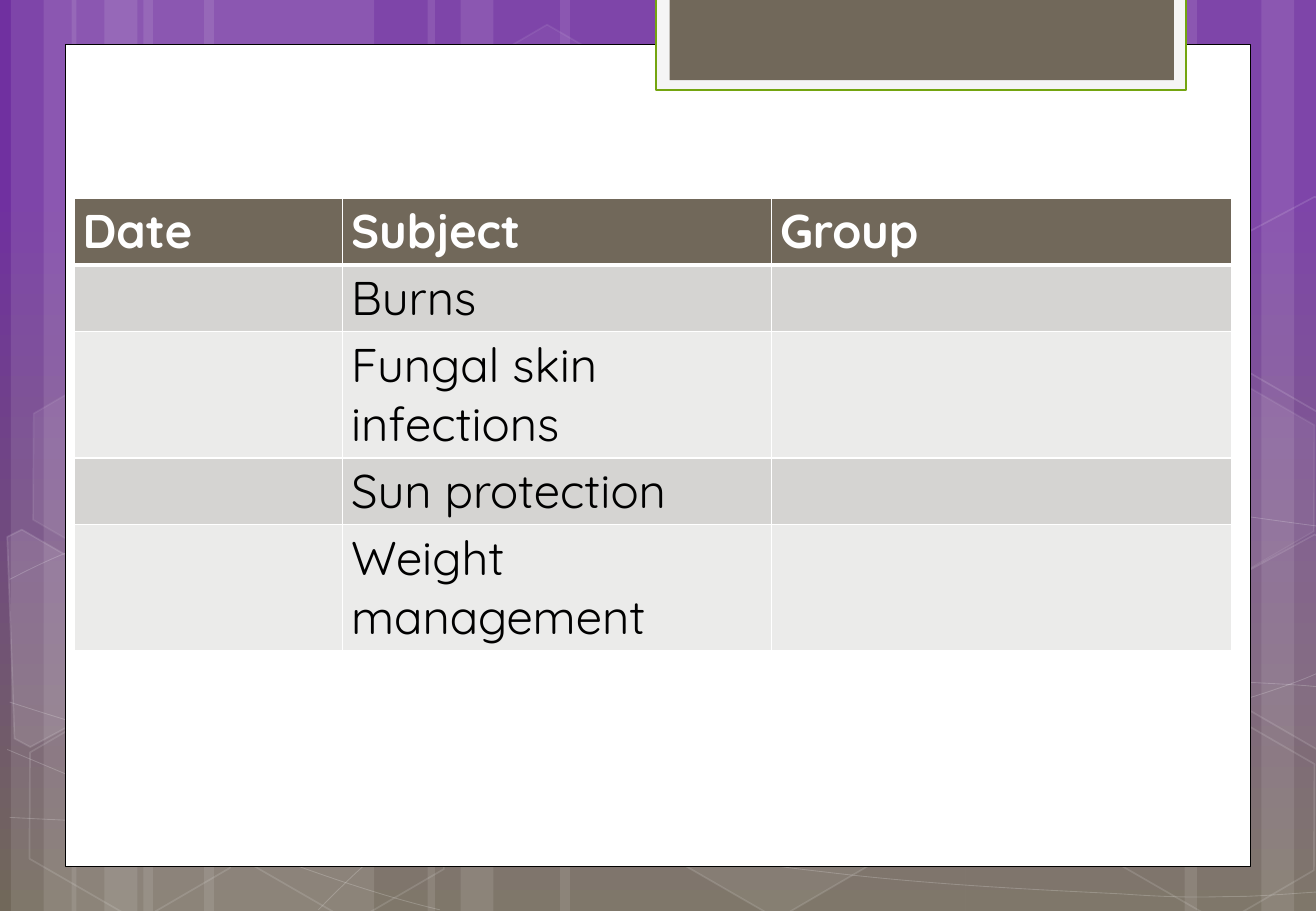
import pptx
import pptx.dml.color
import pptx.enum.shapes
import pptx.oxml
import pptx.oxml.ns
import pptx.util

Inches = pptx.util.Inches
Pt = pptx.util.Pt
MSO_SHAPE = pptx.enum.shapes.MSO_SHAPE
qn = pptx.oxml.ns.qn

COLORS = {
    "purple": "7030A0", "brown": "71685A", "white": "FFFFFF", "black": "000000",
    "tab": "F5F5F5", "green": "74A510", "band_dark": "D5D4D2", "band_light": "EBEBEA",
}
FONT = "Quicksand"
SLIDE_BOX = (0, 0, 10.83, 7.5)
PANEL_BOX = (0.54, 0.37, 9.75, 6.76)
TAB_BOX = (5.4, -0.02, 4.36, 0.76)
TABLE_BOX = (0.61, 1.63, 9.53, 3.73)

STRIPES = [
    (1.18, 1.9), (0.09, 0.54), (0.36, 0.9), (1.68, 1.9), (0.59, 0.54), (0.86, 0.9),
    (7.95, 1.9), (10.38, 0.54), (9.75, 0.9), (4.61, 3.34), (3.52, 0.54), (3.79, 0.9),
]
CURVES = [
    [(0.08, 6.73), (0.66, 6.76), (1.25, 6.79), (2.06, 6.78), (2.88, 6.77), (3.87, 6.75),
     (4.96, 6.65), (6.05, 6.55), (7.58, 6.36), (8.58, 6.17), (9.57, 5.98), (10.58, 5.68),
     (10.91, 5.51)],
    [(0.08, 4.77), (0.39, 4.61), (0.7, 4.46), (1.32, 4.31), (1.93, 4.16), (2.8, 3.94),
     (3.76, 3.87), (4.73, 3.8), (5.89, 3.79), (7.08, 3.87), (8.28, 3.95), (10.26, 4.26),
     (10.91, 4.34)],
    [(0.06, 6.17), (1.37, 6.72), (2.68, 7.27), (3.62, 7.49)],
    [(0.08, 5.78), (0.42, 5.89), (0.76, 6), (1.39, 6.16), (2.02, 6.31), (2.96, 6.56),
     (3.86, 6.73), (4.77, 6.9), (5.91, 7.08), (6.8, 7.18), (7.7, 7.29), (8.66, 7.33),
     (9.24, 7.36), (9.81, 7.4), (9.96, 7.38), (10.24, 7.38), (10.51, 7.37), (10.71, 7.35),
     (10.91, 7.34)],
    [(2.62, 7.49), (2.82, 7.29), (3.01, 7.09), (3.27, 6.91), (3.53, 6.73), (3.9, 6.53),
     (4.2, 6.39), (4.5, 6.25), (4.69, 6.19), (5.09, 6.09), (5.49, 5.99), (6.21, 5.85),
     (6.59, 5.78), (6.97, 5.71), (7.03, 5.71), (7.37, 5.69), (7.7, 5.66), (8.23, 5.63),
     (8.6, 5.62), (8.98, 5.61), (9.6, 5.62), (9.6, 5.62), (9.84, 5.62), (10.08, 5.62),
     (10.32, 5.62), (10.52, 5.63), (10.7, 5.64), (10.8, 5.65), (10.89, 5.66), (10.86, 5.65),
     (10.9, 5.66)],
]
HEXAGONS = [
    (3.62, 0.36, 4, 8), (5.38, 5.89, 6, 12), (0.12, 5.91, None, 12),
    (0.15, 3.12, 7, 8), (1.88, 5.92, None, 12), (8.16, 4.53, 10, 12),
    (9.04, 5.93, None, 12), (9.04, 3.14, 7, 8),
]
CUT_HEXAGONS = [
    ([(0.06, 4.42), (0.18, 4.36), (1.01, 4.84), (1.03, 5.73), (0.25, 6.15), (0.12, 6.08)], 10),
    ([(10.03, 4.83), (10.82, 4.4), (10.9, 4.45), (10.96, 6.16), (10.89, 6.2), (10.06, 5.72)], 4),
    ([(10.03, 2.04), (10.82, 1.62), (10.91, 1.67), (10.96, 3.38), (10.89, 3.42), (10.06, 2.94)],
     None),
]
COLUMN_WIDTHS = [2.21, 3.53, 3.79]
ROW_HEIGHTS = [0.55, 0.55, 1.04, 0.55, 1.04]
ROWS = [
    ["Date", "Subject", "Group"],
    ["", "Burns", ""],
    ["", "Fungal skin infections", ""],
    ["", "Sun protection", ""],
    ["", "Weight management", ""],
]


def rgb(name):
    return pptx.dml.color.RGBColor.from_string(COLORS[name])


def paint_fill(fill, color, opacity):
    if opacity is None:
        fill.background()
        return
    fill.solid()
    fill.fore_color.rgb = rgb(color)
    if opacity < 100:
        color_element = fill._xPr.find(".//" + qn("a:srgbClr"))
        alpha = color_element.makeelement(qn("a:alpha"), {"val": str(opacity * 1000)})
        color_element.append(alpha)


def style(shape, fill="white", opacity=100, line="white", line_width=1, line_opacity=None):
    shape.shadow.inherit = False
    paint_fill(shape.fill, fill, opacity)
    paint_fill(shape.line.fill, line, line_opacity)
    if line_opacity is not None:
        shape.line.width = Pt(line_width)


def add_block(slide, kind, box):
    return slide.shapes.add_shape(kind, *(Inches(length) for length in box))


def add_outline(slide, points, origin, close):
    corners = [(Inches(origin[0] + x), Inches(origin[1] + y)) for x, y in points]
    builder = slide.shapes.build_freeform(*corners[0])
    builder.add_line_segments(corners[1:], close=close)
    return builder.convert_to_shape()


def add_curve(slide, controls, origin):
    curve = add_outline(slide, controls, origin, False)
    segments = list(curve._element.iter(qn("a:lnTo")))
    outline = segments[0].getparent()
    for start in range(0, len(segments), 3):
        bezier = outline.makeelement(qn("a:cubicBezTo"), {})
        for segment in segments[start:start + 3]:
            bezier.append(segment[0])
            outline.remove(segment)
        outline.append(bezier)
    return curve


def add_backdrop(slide, box):
    left, top, width, height = box
    fill = slide.background.fill
    fill.gradient()
    fill.gradient_angle = 270
    for stop, color, position in zip(fill.gradient_stops, ("purple", "brown"), (0.21, 1)):
        stop.color.rgb = rgb(color)
        stop.position = position
    for x, stripe_width in STRIPES:
        stripe = add_block(slide, MSO_SHAPE.RECTANGLE, (left + x, top, stripe_width, height))
        style(stripe, opacity=10)
    for controls in CURVES:
        curve = add_curve(slide, controls, (left, top))
        style(curve, opacity=None, line_width=0.5, line_opacity=20)
    for x, y, opacity, line_opacity in HEXAGONS:
        hexagon = add_block(slide, MSO_SHAPE.HEXAGON, (left + x, top + y, 1.9, 1.52))
        hexagon.adjustments[0] = 0.285
        hexagon.rotation = 30
        style(hexagon, opacity=opacity, line_opacity=line_opacity)
    for points, opacity in CUT_HEXAGONS:
        style(add_outline(slide, points, (left, top), True), opacity=opacity, line_opacity=12)


def add_panel(slide, box):
    panel = add_block(slide, MSO_SHAPE.RECTANGLE, box)
    style(panel, line="black", line_width=0.5, line_opacity=100)


def add_tab(slide, box):
    left, top, width, height = box
    frame = add_block(slide, MSO_SHAPE.RECTANGLE, box)
    style(frame, fill="tab", line="green", line_width=1.25, line_opacity=100)
    inner = (left + 0.11, top, width - 0.21, height - 0.08)
    style(add_block(slide, MSO_SHAPE.RECTANGLE, inner), fill="brown")


def add_borders(cell, bottom_width):
    properties = cell._tc.get_or_add_tcPr()
    for side, width in (("L", 1), ("R", 1), ("T", 1), ("B", bottom_width)):
        properties.append(pptx.oxml.parse_xml(
            f'<a:ln{side} {pptx.oxml.ns.nsdecls("a")} w="{Pt(width)}"><a:solidFill>'
            f'<a:srgbClr val="{COLORS["white"]}"/></a:solidFill></a:ln{side}>'
        ))


def add_schedule(slide, box):
    frame = slide.shapes.add_table(
        len(ROWS), len(COLUMN_WIDTHS), *(Inches(length) for length in box))
    table = frame.table
    for column, width in zip(table.columns, COLUMN_WIDTHS):
        column.width = Inches(width)
    for row_index, (texts, height) in enumerate(zip(ROWS, ROW_HEIGHTS)):
        header = row_index == 0
        table.rows[row_index].height = Inches(height)
        band = "brown" if header else ("band_light", "band_dark")[row_index % 2]
        for column_index, text in enumerate(texts):
            cell = table.cell(row_index, column_index)
            add_borders(cell, 3 if header else 1)
            cell.fill.solid()
            cell.fill.fore_color.rgb = rgb(band)
            cell.margin_left = cell.margin_right = Inches(0.07)
            cell.margin_top = cell.margin_bottom = Inches(0.03)
            cell.text_frame.text = text
            for run in cell.text_frame.paragraphs[0].runs:
                run.font.name = FONT
                run.font.size = Pt(28)
                run.font.bold = header
                run.font.color.rgb = rgb("white" if header else "black")


def main():
    presentation = pptx.Presentation()
    presentation.slide_width = Inches(SLIDE_BOX[2])
    presentation.slide_height = Inches(SLIDE_BOX[3])
    slide = presentation.slides.add_slide(presentation.slide_layouts[6])
    add_backdrop(slide, SLIDE_BOX)
    add_panel(slide, PANEL_BOX)
    add_tab(slide, TAB_BOX)
    add_schedule(slide, TABLE_BOX)
    presentation.save("out.pptx")


if __name__ == "__main__":
    main()
